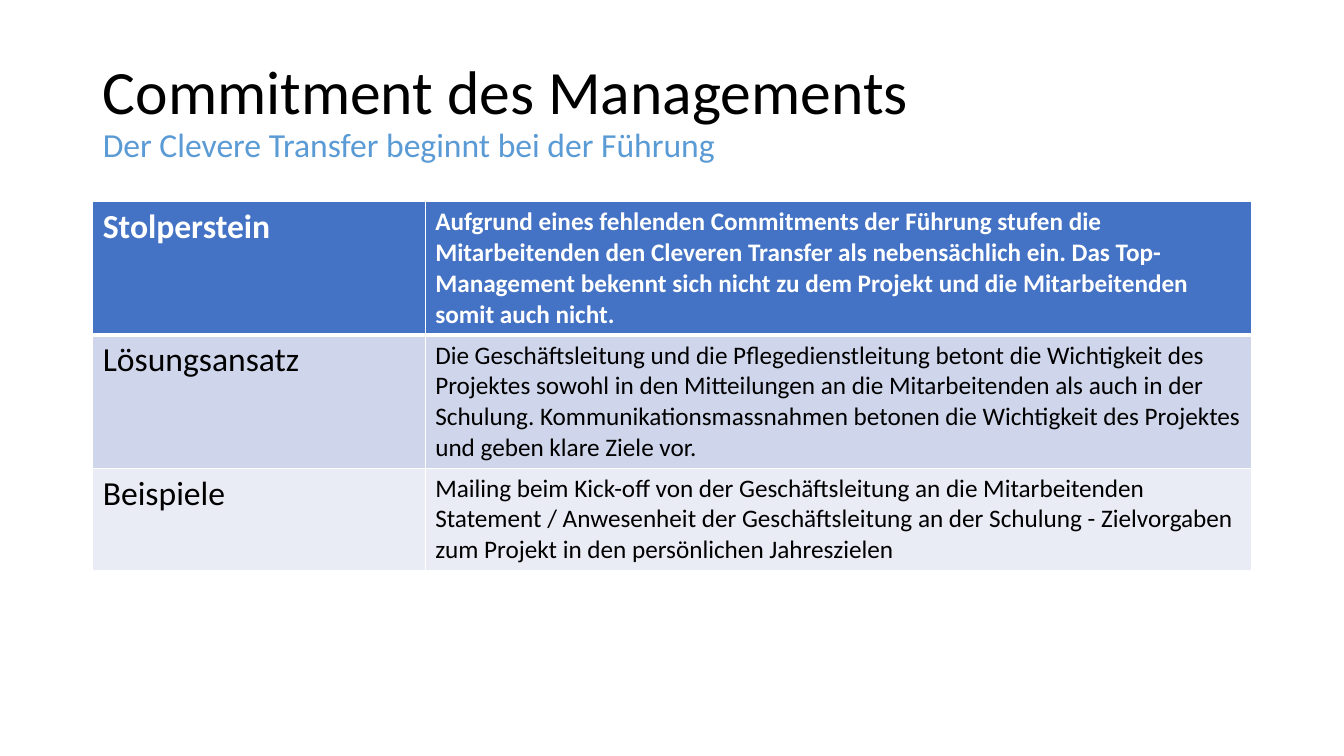
import pptx
import pptx.dml.color
import pptx.enum.text
import pptx.oxml.ns
import pptx.util
from lxml import etree

WIDTH, HEIGHT = pptx.util.Inches(13.33), pptx.util.Inches(7.5)
LEFT, CONTENT_WIDTH = 0.069, 0.862
LABEL_SHARE = 0.287
LINE_SHARE, PADDING_SHARE = 0.0407, 0.0133

ADVICE = [
    ("Stolperstein", [
        "Aufgrund eines fehlenden Commitments der Führung stufen die Mitarbeitenden "
        "den Cleveren Transfer als nebensächlich ein. Das Top-Management bekennt sich "
        "nicht zu dem Projekt und die Mitarbeitenden somit auch nicht."], 4, "4472C4"),
    ("Lösungsansatz", [
        "Die Geschäftsleitung und die Pflegedienstleitung betont die Wichtigkeit des "
        "Projektes sowohl in den Mitteilungen an die Mitarbeitenden als auch in der "
        "Schulung. Kommunikationsmassnahmen betonen die Wichtigkeit des Projektes und "
        "geben klare Ziele vor."], 4, "CFD5EA"),
    ("Beispiele", [
        "Mailing beim Kick-off von der Geschäftsleitung an die Mitarbeitenden",
        "Statement / Anwesenheit der Geschäftsleitung an der Schulung - Zielvorgaben "
        "zum Projekt in den persönlichen Jahreszielen"], 3, "E9EBF5"),
]


def colour(hex_code):
    """Turn a hex string into a colour."""
    return pptx.dml.color.RGBColor.from_string(hex_code)


def across(share):
    """Return a share of the slide's width."""
    return int(WIDTH * share)


def down(share):
    """Return a share of the slide's height."""
    return int(HEIGHT * share)


def add_run(paragraph, wording, size, hex_code, bold=False):
    """Append one formatted run to a paragraph."""
    run = paragraph.add_run()
    run.text = wording
    run.font.name = "Calibri"
    run.font.size = pptx.util.Pt(size)
    run.font.bold = bold
    run.font.color.rgb = colour(hex_code)


def add_heading(slide, heading, subheading):
    """Fill the title placeholder with a heading and a smaller second line."""
    title = slide.shapes.title
    title.left, title.top = across(LEFT), down(0.053)
    title.width, title.height = across(CONTENT_WIDTH), down(0.193)
    frame = title.text_frame
    frame.word_wrap = True
    frame.auto_size = pptx.enum.text.MSO_AUTO_SIZE.NONE
    frame.vertical_anchor = pptx.enum.text.MSO_ANCHOR.MIDDLE
    paragraph = frame.paragraphs[0]
    paragraph.alignment = pptx.enum.text.PP_ALIGN.LEFT
    paragraph.line_spacing = 0.9
    add_run(paragraph, heading, 44, "000000")
    paragraph.add_line_break()
    add_run(paragraph, subheading, 24, "5B9BD5")


def set_borders(cell, top, bottom):
    """Draw white borders around a cell, with widths in points."""
    properties = cell._tc.get_or_add_tcPr()
    for side, points in (("L", 1), ("R", 1), ("T", top), ("B", bottom)):
        border = etree.SubElement(properties, pptx.oxml.ns.qn(f"a:ln{side}"),
                                  w=str(pptx.util.Pt(points)))
        fill = etree.SubElement(border, pptx.oxml.ns.qn("a:solidFill"))
        etree.SubElement(fill, pptx.oxml.ns.qn("a:srgbClr"), val="FFFFFF")


def fill_cell(cell, paragraphs, size, background, row_index):
    """Write paragraphs into a cell and format it for its row."""
    is_header = row_index == 0
    set_borders(cell, 3 if row_index == 1 else 1, 3 if is_header else 1)
    cell.fill.solid()
    cell.fill.fore_color.rgb = colour(background)
    for index, wording in enumerate(paragraphs):
        frame = cell.text_frame
        paragraph = frame.add_paragraph() if index else frame.paragraphs[0]
        add_run(paragraph, wording, size, "FFFFFF" if is_header else "000000", is_header)


def add_advice_table(slide, advice):
    """Add the table of labels and explanations, with rows sized by line count."""
    heights = [down(lines * LINE_SHARE + PADDING_SHARE) for _, _, lines, _ in advice]
    table = slide.shapes.add_table(len(advice), 2, across(LEFT), down(0.267),
                                   across(CONTENT_WIDTH), sum(heights)).table
    table.columns[0].width = across(CONTENT_WIDTH * LABEL_SHARE)
    table.columns[1].width = across(CONTENT_WIDTH * (1 - LABEL_SHARE))
    for index, (label, explanation, _, background) in enumerate(advice):
        table.rows[index].height = heights[index]
        fill_cell(table.cell(index, 0), [label], 24, background, index)
        fill_cell(table.cell(index, 1), explanation, 18, background, index)


def main():
    """Build the slide and save it."""
    deck = pptx.Presentation()
    deck.slide_width, deck.slide_height = WIDTH, HEIGHT
    slide = deck.slides.add_slide(deck.slide_layouts[5])
    add_heading(slide, "Commitment des Managements",
                "Der Clevere Transfer beginnt bei der Führung")
    add_advice_table(slide, ADVICE)
    deck.save("out.pptx")


if __name__ == "__main__":
    main()
